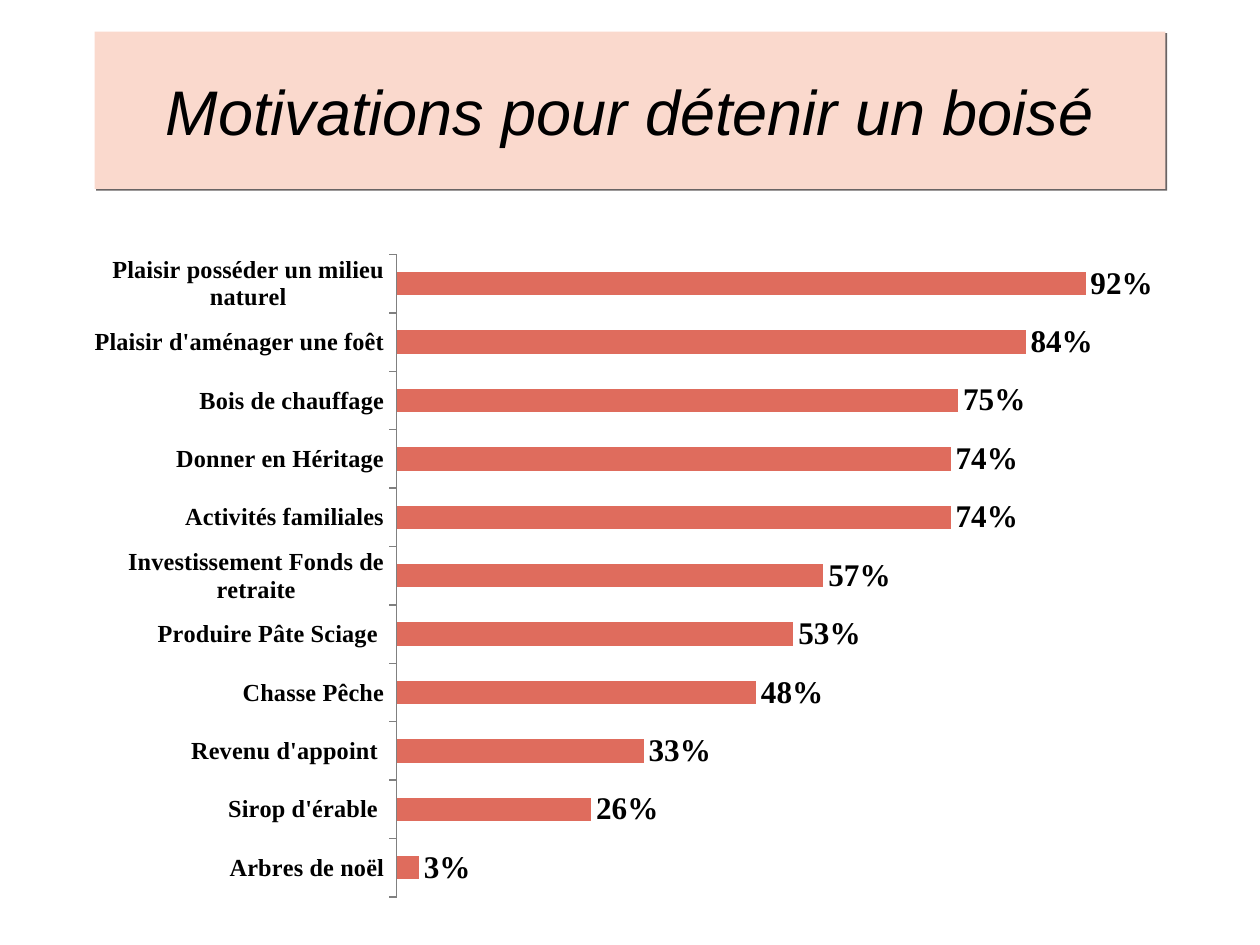
from typing import NamedTuple

from lxml.etree import SubElement
from pptx import Presentation
from pptx.chart.data import CategoryChartData
from pptx.dml.color import RGBColor
from pptx.enum.chart import XL_CHART_TYPE, XL_LABEL_POSITION, XL_TICK_LABEL_POSITION, XL_TICK_MARK
from pptx.enum.text import MSO_ANCHOR, PP_ALIGN
from pptx.oxml.ns import qn
from pptx.util import Pt

EMU_PER_PX = 9144  # 100 px to the inch
COLORS = {
    "text": "000000",
    "banner": "FAD9CD",
    "shadow": "696464",
    "bar": "DF6C5D",
    "axis": "808080",
}


class Motivation(NamedTuple):
    label: str
    share: float


class Box(NamedTuple):
    left: int
    top: int
    width: int
    height: int


# Listed from the bottom bar to the top bar
MOTIVATIONS = [
    Motivation("Arbres de noël", 0.03),
    Motivation("Sirop d'érable ", 0.26),
    Motivation("Revenu d'appoint ", 0.33),
    Motivation("Chasse Pêche", 0.48),
    Motivation("Produire Pâte Sciage ", 0.53),
    Motivation("Investissement Fonds de retraite", 0.57),
    Motivation("Activités familiales", 0.74),
    Motivation("Donner en Héritage", 0.74),
    Motivation("Bois de chauffage", 0.75),
    Motivation("Plaisir d'aménager une foêt", 0.84),
    Motivation("Plaisir posséder un milieu naturel", 0.92),
]
BANNER = Box(75, 25, 850, 125)
CHART = Box(75, 192, 850, 531)
PLOT = Box(308, 202, 601, 510)


def px(length: int) -> int:
    return length * EMU_PER_PX


def rgb(name: str) -> RGBColor:
    return RGBColor.from_string(COLORS[name])


def format_font(font, size: int, name: str, bold: bool = False, italic: bool = False) -> None:
    font.size, font.name = Pt(size), name
    font.bold, font.italic = bold, italic
    font.color.rgb = rgb("text")


def write_text(frame, text: str, align=PP_ALIGN.CENTER, anchor=MSO_ANCHOR.MIDDLE, **font_format) -> None:
    frame.word_wrap = True
    frame.vertical_anchor = anchor
    paragraph = frame.paragraphs[0]
    paragraph.alignment = align
    run = paragraph.add_run()
    run.text = text
    format_font(run.font, **font_format)


def add_shadow(shape) -> None:
    shape.shadow.inherit = False
    effects = shape.element.spPr.find(qn("a:effectLst"))
    shadow = SubElement(effects, qn("a:outerShdw"), blurRad="0", dist=str(Pt(1.4)),
                        dir=str(45 * 60000), algn="ctr", rotWithShape="0")
    SubElement(shadow, qn("a:srgbClr"), val=COLORS["shadow"])


def place_plot(chart, frame: Box, plot: Box) -> None:
    """Fix the inner plot area as fractions of the chart frame."""
    plot_area = chart.element.find(".//" + qn("c:plotArea"))
    layout = plot_area.find(qn("c:layout"))
    if layout is None:
        layout = SubElement(plot_area, qn("c:layout"))
        plot_area.insert(0, layout)
    manual = SubElement(layout, qn("c:manualLayout"))
    settings = {
        "layoutTarget": "inner",
        "xMode": "edge",
        "yMode": "edge",
        "x": (plot.left - frame.left) / frame.width,
        "y": (plot.top - frame.top) / frame.height,
        "w": plot.width / frame.width,
        "h": plot.height / frame.height,
    }
    for tag, value in settings.items():
        SubElement(manual, qn(f"c:{tag}"), val=str(value))


def add_banner(slide) -> None:
    title = slide.shapes.title
    title.left, title.top, title.width, title.height = map(px, BANNER)
    title.fill.solid()
    title.fill.fore_color.rgb = rgb("banner")
    add_shadow(title)
    write_text(title.text_frame, "Motivations pour détenir un boisé",
               size=36, name="Arial", italic=True)


def add_motivation_chart(slide) -> None:
    data = CategoryChartData(number_format="0%")
    data.categories = [motivation.label for motivation in MOTIVATIONS]
    data.add_series("Series 1", [motivation.share for motivation in MOTIVATIONS])
    chart = slide.shapes.add_chart(XL_CHART_TYPE.BAR_CLUSTERED, *map(px, CHART), data).chart
    chart.has_legend = chart.has_title = False
    format_font(chart.font, size=18, name="Times New Roman")
    place_plot(chart, CHART, PLOT)

    # Axes
    reasons = chart.category_axis
    reasons.major_tick_mark = XL_TICK_MARK.OUTSIDE
    reasons.minor_tick_mark = XL_TICK_MARK.NONE
    reasons.tick_label_position = XL_TICK_LABEL_POSITION.NEXT_TO_AXIS
    reasons.format.line.color.rgb = rgb("axis")
    format_font(reasons.tick_labels.font, size=14, name="Times New Roman", bold=True)
    shares = chart.value_axis
    shares.minimum_scale, shares.maximum_scale = 0, 1
    shares.has_major_gridlines = False
    shares.visible = False

    # Bars and their labels
    bars = chart.plots[0]
    bars.gap_width = 150
    bars.vary_by_categories = False
    series = bars.series[0]
    series.format.fill.solid()
    series.format.fill.fore_color.rgb = rgb("bar")
    labels = series.data_labels
    labels.show_value = True
    labels.position = XL_LABEL_POSITION.OUTSIDE_END
    labels.number_format, labels.number_format_is_linked = "0%", False
    format_font(labels.font, size=18, name="Times New Roman", bold=True)


def main() -> None:
    presentation = Presentation()
    presentation.slide_width, presentation.slide_height = px(1000), px(750)
    slide = presentation.slides.add_slide(presentation.slide_layouts[5])
    add_banner(slide)
    add_motivation_chart(slide)
    presentation.save("out.pptx")


if __name__ == "__main__":
    main()
